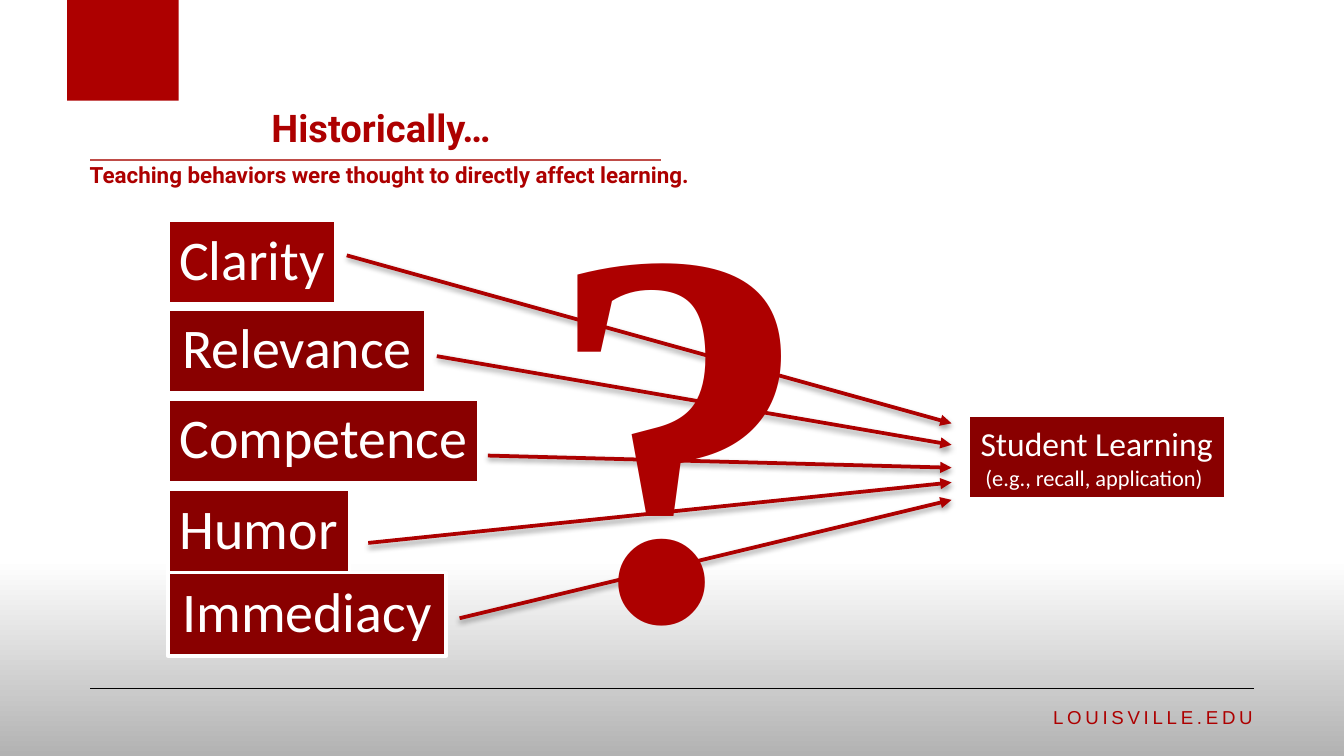
from lxml.etree import SubElement as Sub
from pptx import Presentation
from pptx.dml.color import RGBColor
from pptx.enum.shapes import MSO_CONNECTOR as Link, MSO_SHAPE as Form
from pptx.enum.text import MSO_ANCHOR as Anchor, MSO_AUTO_SIZE as Fit, PP_ALIGN as Align
from pptx.oxml.ns import qn
from pptx.util import Inches, Pt

RED = RGBColor(0xAD, 0x00, 0x00)
ROSE = RGBColor(0xBF, 0x4C, 0x48)
DARK = RGBColor(0x89, 0x00, 0x00)
DEEP = RGBColor(0x9B, 0x00, 0x00)
WHITE = RGBColor(0xFF, 0xFF, 0xFF)
GREY = RGBColor(0xB2, 0xB2, 0xB2)
BLACK = RGBColor(0x00, 0x00, 0x00)

HIGH = 0.62
CAUSES = [
    ("Clarity", 1.64, 1.25, DEEP, (2.58, 1.9), 3.15),
    ("Relevance", 2.3, 1.92, DARK, (3.25, 2.65), 3.31),
    ("Competence", 2.97, 2.31, DARK, (3.63, 3.39), 3.48),
    ("Humor", 3.64, 1.35, DARK, (2.74, 4.04), 3.59),
    ("Immediacy", 4.26, 2.07, DARK, (3.42, 4.6), 3.72),
]


def write(shape, text, size, font="Calibri", color=WHITE, bold=False,
          align=Align.CENTER, anchor=Anchor.MIDDLE, wrap=True, inset=None,
          lead=None, track=None, more=False):
    frame = shape.text_frame
    frame.auto_size = Fit.NONE
    frame.word_wrap = wrap
    frame.vertical_anchor = anchor
    if inset is not None:
        frame.margin_left = frame.margin_right = Inches(inset)
        frame.margin_top = frame.margin_bottom = Inches(inset)
    para = frame.add_paragraph() if more else frame.paragraphs[0]
    para.alignment = align
    if lead:
        para.line_spacing = lead
    run = para.add_run()
    run.text = text
    run.font.name = font
    run.font.size = Pt(size)
    run.font.bold = bold
    run.font.color.rgb = color
    if track:
        run.font._element.set("spc", str(track * 100))


def label(slide, box, text, size, **style):
    shape = slide.shapes.add_textbox(*map(Inches, box))
    write(shape, text, size, **style)


def block(slide, box, color, edge=None):
    shape = slide.shapes.add_shape(Form.RECTANGLE, *map(Inches, box))
    shape.shadow.inherit = False
    shape.fill.solid()
    shape.fill.fore_color.rgb = color
    if edge:
        shape.line.color.rgb = edge
        shape.line.width = Pt(2)
    else:
        shape.line.fill.background()
    return shape


def rule(slide, start, end, color, width):
    line = slide.shapes.add_connector(
        Link.STRAIGHT, *map(Inches, (*start, *end)))
    line.line.color.rgb = color
    line.line.width = Pt(width)
    effect = Sub(line._element.spPr, qn("a:effectLst"))
    return line, effect


def arrow(slide, start, end):
    line, effect = rule(slide, start, end, RED, 2)
    Sub(line._element.spPr.find(qn("a:ln")), qn("a:tailEnd"), type="triangle")
    shade = Sub(effect, qn("a:outerShdw"), blurRad=str(Pt(3.1)),
                dist=str(Pt(1.6)), dir="5400000", rotWithShape="0")
    tone = Sub(shade, qn("a:srgbClr"), val=str(BLACK))
    Sub(tone, qn("a:alpha"), val="38000")


def back(slide):
    fill = slide.background.fill
    fill.gradient()
    fill.gradient_angle = 270
    for stop, place, color in zip(fill.gradient_stops, (0.74, 1), (WHITE, GREY)):
        stop.position = place
        stop.color.rgb = color


def head(slide, left, top):
    block(slide, (left, top, 0.83, 0.75), RED)
    rule(slide, (left + 0.17, top + 1.19), (left + 4.42, top + 1.19), ROSE, 0.75)
    title = slide.shapes.title
    title.left, title.top = Inches(left + 1.42), Inches(top + 0.48)
    title.width, title.height = Inches(2), Inches(0.69)
    write(title, "Historically…", 20.4, font="Roboto", color=RED, bold=True,
          align=Align.LEFT, anchor=Anchor.BOTTOM)
    label(slide, (left - 0.12, top + 0.76, 5.08, 0.69),
          "Teaching behaviors were thought to directly affect learning. ", 12,
          font="Roboto", color=RED, bold=True, anchor=Anchor.BOTTOM)


def causes(slide, left):
    for text, top, wide, color, _, _ in CAUSES:
        shape = block(slide, (left, top, wide, HIGH), color, WHITE)
        write(shape, text, 30, wrap=False, inset=0.08, lead=0.9)


def result(slide, left, top):
    shape = block(slide, (left, top, 1.92, HIGH), DARK, WHITE)
    write(shape, "Student Learning", 18, wrap=False, inset=0.08)
    write(shape, "(e.g., recall, application) ", 12, wrap=False, inset=0.08,
          more=True)
    for *_, start, level in CAUSES:
        arrow(slide, start, (left - 0.12, level))


def doubt(slide, box):
    label(slide, box, "?", 287, font="Times New Roman", color=RED, bold=True,
          align=Align.LEFT, anchor=Anchor.BOTTOM)


def foot(slide, left, top, wide):
    rule(slide, (left, top), (left + wide, top), BLACK, 0.5)
    label(slide, (left + wide - 2.08, top + 0.08, 2.17, 0.3), "LOUISVILLE.EDU",
          10, font="Arial", color=RED, align=Align.RIGHT, anchor=Anchor.TOP,
          track=2)


def main():
    deck = Presentation()
    deck.slide_width = Inches(10)
    deck.slide_height = deck.slide_width * 9 // 16
    slide = deck.slides.add_slide(deck.slide_layouts[5])
    back(slide)
    foot(slide, 0.67, 5.12, 8.66)
    head(slide, 0.5, 0)
    causes(slide, 1.25)
    result(slide, 7.2, 3.09)
    doubt(slide, (3.96, 4.08, 2.58, 1.37))
    deck.save("out.pptx")


if __name__ == "__main__":
    main()
